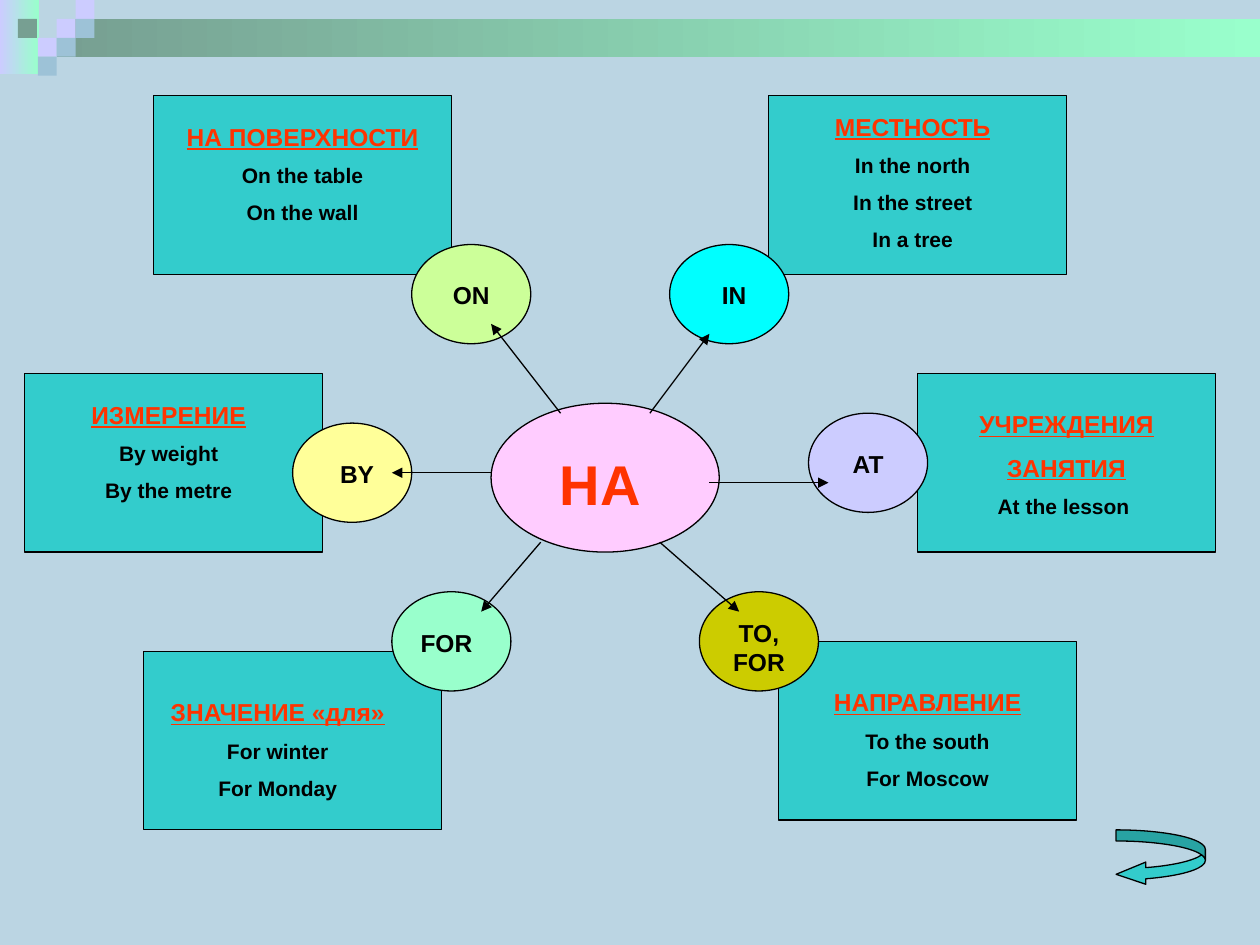
from pptx import Presentation
from pptx.dml.color import RGBColor as RGB
from pptx.enum.shapes import MSO_CONNECTOR as CONN, MSO_SHAPE as SHAPE
from pptx.enum.text import MSO_AUTO_SIZE as AUTOSIZE, PP_ALIGN as ALIGN
from pptx.oxml.ns import qn
from pptx.util import Inches, Pt
from lxml.etree import SubElement

THEME = {
    "font": "Arial", "bg": "BBD5E3", "ink": "000000", "accent": "FF3300",
    "card": "33CCCC", "hub": "FFCCFF", "lilac": "CCCCFF", "mint": "99FFCC",
    "sage": "779F92", "steel": "9DC2D7",
    "hub_size": 32, "head_size": 14, "body_size": 12, "line": 0.75,
}

prs = Presentation()
prs.slide_width, prs.slide_height = Inches(10), Inches(7.5)
slide = prs.slides.add_slide(prs.slide_layouts[6])
slide.background.fill.solid()
slide.background.fill.fore_color.rgb = RGB.from_string(THEME["bg"])

# Diagram grid: 127 columns across the slide, square cells, small origin offset
CELL = prs.slide_width / 127
LEFT, TOP = 2.5 * CELL, 0.65 * CELL


def add_shape(kind, box, fill, outline=True):
    """Add a preset shape; a pair of colours gives a left-to-right gradient."""
    s = slide.shapes.add_shape(kind, *(int(v) for v in box))
    s.shadow.inherit = False
    if isinstance(fill, tuple):
        s.fill.gradient()
        s.fill.gradient_angle = 0
        for stop, color in zip(s.fill.gradient_stops, fill):
            stop.color.rgb = RGB.from_string(color)
    else:
        s.fill.solid()
        s.fill.fore_color.rgb = RGB.from_string(fill)
    if outline:
        s.line.color.rgb = RGB.from_string(THEME["ink"])
        s.line.width = Pt(THEME["line"])
    else:
        s.line.fill.background()
    return s


def add_text(lines, col, row, cols, rows, size=THEME["head_size"],
             color=THEME["ink"], heads=0):
    """Add centred bold lines; the first `heads` are underlined headings."""
    box = slide.shapes.add_textbox(int(LEFT + col * CELL), int(TOP + row * CELL),
                                   int(cols * CELL), int(rows * CELL))
    tf = box.text_frame
    tf.word_wrap = True
    tf.auto_size = AUTOSIZE.SHAPE_TO_FIT_TEXT
    for i, line in enumerate(lines):
        p = tf.paragraphs[0] if i == 0 else tf.add_paragraph()
        p.alignment = ALIGN.CENTER
        is_head = i < heads
        pt = THEME["head_size"] if is_head else size
        if i:
            p.space_before = Pt(round(pt * 0.56, 1))
        r = p.add_run()
        r.text = line
        r.font.name, r.font.size, r.font.bold = THEME["font"], Pt(pt), True
        r.font.underline = is_head
        r.font.color.rgb = RGB.from_string(THEME["accent"] if is_head else color)


# Header: gradient bars and a checker of small squares
TILE = Inches(0.15)
bars = [(0, 0, 2.05, 3.9, ("lilac", "mint")), (3, 1, 63.67, 2, ("sage", "mint"))]
for x, y, w, h, colors in bars:
    add_shape(SHAPE.RECTANGLE, [v * TILE for v in (x, y, w, h)],
              tuple(THEME[c] for c in colors), outline=False)
tiles = [(3, 1, "lilac"), (4, 0, "lilac"), (4, 1, "steel"), (2, 2, "lilac"),
         (0.95, 1, "sage"), (3, 2, "steel"), (2, 3, "steel")]
for x, y, color in tiles:
    add_shape(SHAPE.RECTANGLE, (x * TILE, y * TILE, TILE, TILE), THEME[color],
              outline=False)

# Hub
add_shape(SHAPE.OVAL, (LEFT + 47 * CELL, TOP + 40 * CELL, 23 * CELL, 15 * CELL),
          THEME["hub"])
add_text(["НА"], 52, 44, 12, 8, size=THEME["hub_size"], color=THEME["accent"])

# Branches: card corner, card text box, heading count, lines,
# bubble corner, colour, label box, label, arrow start and end
branches = [
    ((13, 9), (15, 11, 26, 15), 1, ["НА ПОВЕРХНОСТИ", "On the table", "On the wall"],
     (39, 24), "CCFF99", (39, 27, 12, 4), "ON", (54, 41), (47, 32)),
    ((75, 9), (77, 10, 25, 16), 1,
     ["МЕСТНОСТЬ", "In the north", "In the street", "In a tree"],
     (65, 24), "00FFFF", (67, 27, 9, 4), "IN", (63, 41), (69, 33)),
    ((0, 37), (2, 39, 25, 12), 1, ["ИЗМЕРЕНИЕ", "By weight", "By the metre"],
     (27, 42), "FFFF99", (29, 45, 9, 4), "BY", (47, 47), (37, 47)),
    ((90, 37), (93, 40, 24, 16), 2, ["УЧРЕЖДЕНИЯ", "ЗАНЯТИЯ", "At the lesson "],
     (79, 41), "CCCCFF", (81, 44, 8, 4), "AT", (69, 48), (81, 48)),
    ((12, 65), (13, 69, 25, 16), 1, ["ЗНАЧЕНИЕ «для»", "For winter", "For Monday"],
     (37, 59), "99FFCC", (37, 62, 11, 4), "FOR", (52, 54), (46, 61)),
    ((76, 64), (79, 68, 24, 12), 1, ["НАПРАВЛЕНИЕ", "To the south", "For Moscow"],
     (68, 59), "CCCC00", (70, 61, 8, 7), "TO,FOR", (64, 54), (72, 61)),
]
for card, text_box, heads, lines, bubble, color, label_box, label, start, end in branches:
    add_shape(SHAPE.RECTANGLE, (LEFT + card[0] * CELL, TOP + card[1] * CELL,
                                30 * CELL, 18 * CELL), THEME["card"])
    add_text(lines, *text_box, size=THEME["body_size"], heads=heads)
    add_shape(SHAPE.OVAL, (LEFT + bubble[0] * CELL, TOP + bubble[1] * CELL,
                           12 * CELL, 10 * CELL), color)
    add_text([label], *label_box)

    # Arrow from the hub to the bubble
    c = slide.shapes.add_connector(
        CONN.STRAIGHT, int(LEFT + start[0] * CELL), int(TOP + start[1] * CELL),
        int(LEFT + end[0] * CELL), int(TOP + end[1] * CELL))
    c.line.color.rgb = RGB.from_string(THEME["ink"])
    c.line.width = Pt(THEME["line"])
    SubElement(c.line._get_or_add_ln(), qn("a:tailEnd"), type="triangle")
    SubElement(c._element.spPr, qn("a:effectLst"))

# Return arrow
back = add_shape(SHAPE.CURVED_LEFT_ARROW, (LEFT + 110 * CELL, TOP + 83 * CELL,
                                           9 * CELL, 5.6 * CELL), THEME["card"])
for i, value in enumerate((0.2, 0.4, 0.535)):
    back.adjustments[i] = value

prs.save("out.pptx")
